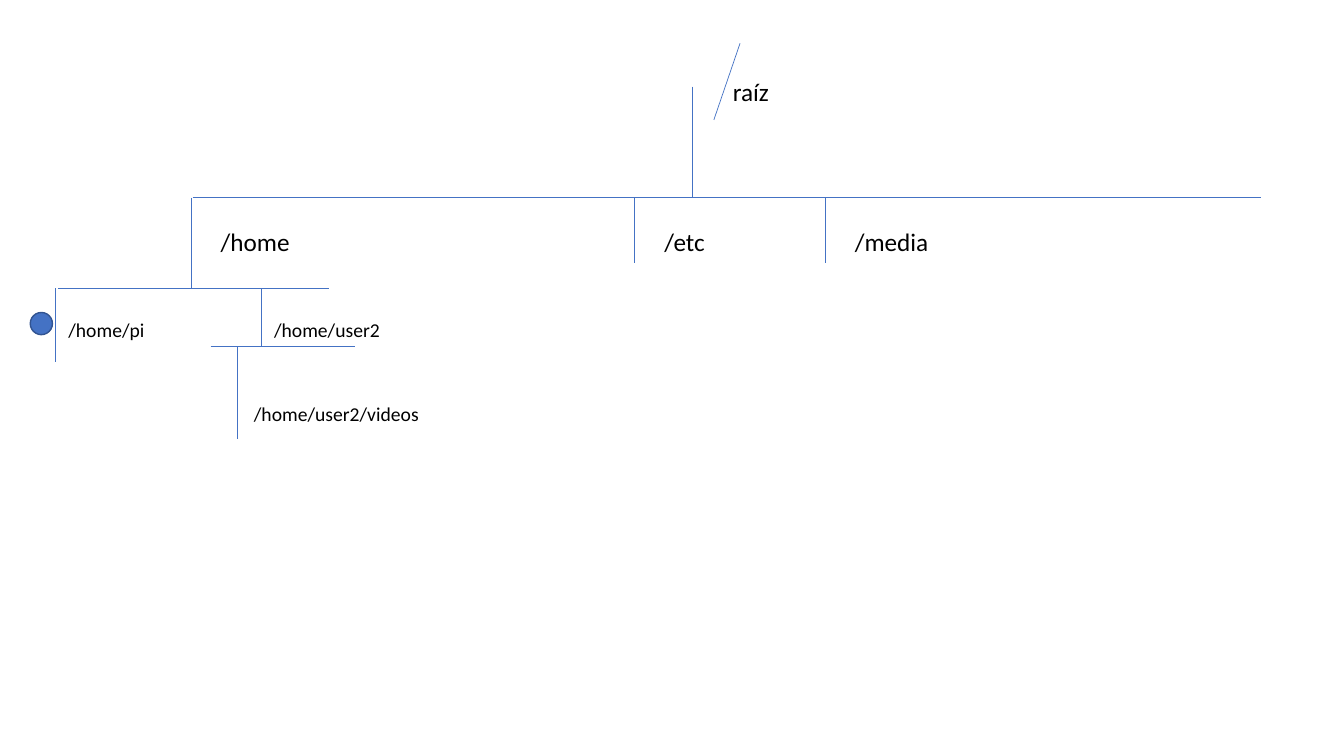
"""Draw a directory tree from the root down to the user folders."""
from dataclasses import dataclass

from lxml import etree
from pptx import Presentation
from pptx.dml.color import RGBColor
from pptx.enum.shapes import MSO_CONNECTOR, MSO_SHAPE
from pptx.oxml.ns import qn
from pptx.util import Inches, Pt

STRAIGHT = MSO_CONNECTOR.STRAIGHT
OVAL = MSO_SHAPE.OVAL
BLANK_LAYOUT = 6


@dataclass(frozen=True)
class Theme:
    font: str = "Calibri"
    text: RGBColor = RGBColor(0x00, 0x00, 0x00)
    accent: RGBColor = RGBColor(0x44, 0x72, 0xC4)
    outline: RGBColor = RGBColor(0x32, 0x54, 0x91)
    folder_size: int = 18
    subfolder_size: int = 14
    branch_width: float = 0.5
    outline_width: float = 1


THEME = Theme()

ROOT_LEVEL, HOME_LEVEL, USER_LEVEL = 1.96, 2.86, 3.44

RAILS = [
    (1.91, 12.51, ROOT_LEVEL),
    (0.58, 3.26, HOME_LEVEL),
    (2.09, 3.52, USER_LEVEL),
]

STEMS = [
    (6.87, 0.86, ROOT_LEVEL),
    (1.9, ROOT_LEVEL, HOME_LEVEL),
    (6.29, ROOT_LEVEL, 2.61),
    (8.19, ROOT_LEVEL, 2.61),
    (0.55, HOME_LEVEL, 3.59),
    (2.59, HOME_LEVEL, USER_LEVEL),
    (2.35, USER_LEVEL, 4.36),
]

FOLDERS = [
    ("raíz", 7.17, 0.71, 0.68),
    ("/home", 2.09, 2.2, 0.95),
    ("/etc", 6.49, 2.2, 0.95),
    ("/media", 8.38, 2.2, 0.95),
]

SUBFOLDERS = [
    ("/home/pi", 0.58, 3.1, 1.03),
    ("/home/user2", 2.62, 3.1, 1.33),
    ("/home/user2/videos", 2.42, 3.94, 1.93),
]


def add_branch(slide, start_x, start_y, end_x, end_y):
    """Add one thin line of the tree."""
    branch = slide.shapes.add_connector(
        STRAIGHT, Inches(start_x), Inches(start_y), Inches(end_x), Inches(end_y)
    )
    branch.line.color.rgb = THEME.accent
    branch.line.width = Pt(THEME.branch_width)
    etree.SubElement(branch._element.spPr, qn("a:effectLst"))


def add_label(slide, text, left, top, width, height, size):
    """Add the name of a folder."""
    label = slide.shapes.add_textbox(
        Inches(left), Inches(top), Inches(width), Inches(height)
    )
    label.text_frame.word_wrap = True
    label.text_frame.text = text
    font = label.text_frame.paragraphs[0].runs[0].font
    font.name = THEME.font
    font.size = Pt(size)
    font.color.rgb = THEME.text


def add_marker(slide, left, top, diameter):
    """Add the dot that marks the current folder."""
    marker = slide.shapes.add_shape(
        OVAL, Inches(left), Inches(top), Inches(diameter), Inches(diameter)
    )
    marker.shadow.inherit = False
    marker.fill.solid()
    marker.fill.fore_color.rgb = THEME.accent
    marker.line.color.rgb = THEME.outline
    marker.line.width = Pt(THEME.outline_width)


def main():
    """Build the slide and save it."""
    presentation = Presentation()
    presentation.slide_width = Inches(13.33)
    presentation.slide_height = Inches(7.5)
    slide = presentation.slides.add_slide(presentation.slide_layouts[BLANK_LAYOUT])

    add_branch(slide, 7.34, 0.43, 7.08, 1.19)
    for left, right, level in RAILS:
        add_branch(slide, left, level, right, level)
    for position, top, bottom in STEMS:
        add_branch(slide, position, top, position, bottom)
    for text, left, top, width in FOLDERS:
        add_label(slide, text, left, top, width, 0.4, THEME.folder_size)
    for text, left, top, width in SUBFOLDERS:
        add_label(slide, text, left, top, width, 0.34, THEME.subfolder_size)
    add_marker(slide, 0.3, 3.1, 0.22)

    presentation.save("out.pptx")


if __name__ == "__main__":
    main()
